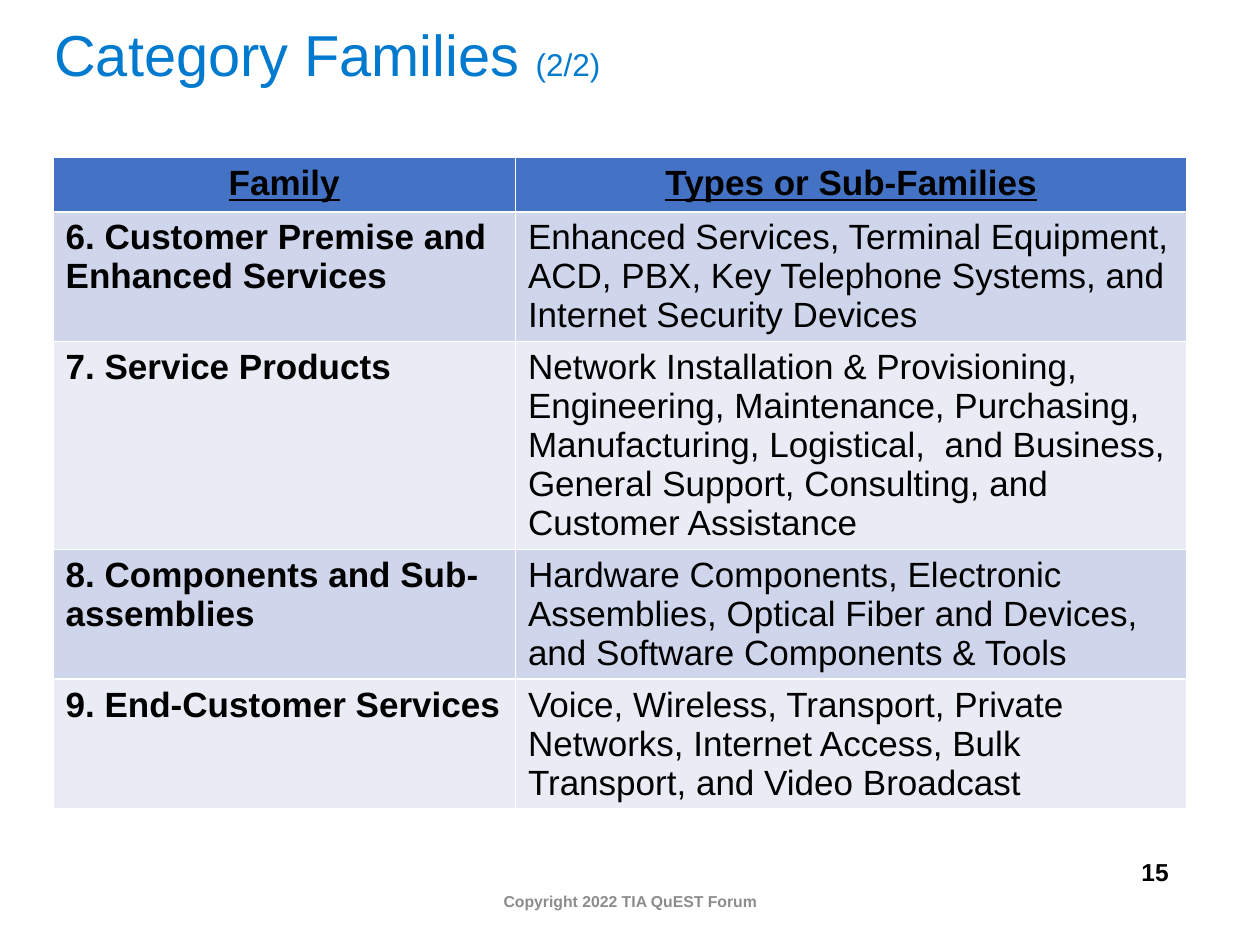
from typing import NamedTuple

from pptx import Presentation
from pptx import util as u
from pptx.dml.color import RGBColor
from pptx.enum import text


class Family(NamedTuple):
    name: str
    types: str


class Label(NamedTuple):
    words: str
    box: tuple[float, float, float, float]  # left, top, width, height in cm
    size: float
    color: str
    anchor: text.MSO_ANCHOR


FAMILIES = [
    Family("6. Customer Premise and Enhanced Services",
           "Enhanced Services, Terminal Equipment, ACD, PBX, Key Telephone "
           "Systems, and Internet Security Devices"),
    Family("7. Service Products",
           "Network Installation & Provisioning, Engineering, Maintenance, "
           "Purchasing, Manufacturing, Logistical,  and Business, "
           "General Support, Consulting, and Customer Assistance"),
    Family("8. Components and Sub-assemblies",
           "Hardware Components, Electronic Assemblies, Optical Fiber and "
           "Devices, and Software Components & Tools"),
    Family("9. End-Customer Services",
           "Voice, Wireless, Transport, Private Networks, Internet Access, "
           "Bulk Transport, and Video Broadcast"),
]
LABELS = [
    Label("Copyright 2022 TIA QuEST Forum", (8.41, 17.65, 8.59, 1.02),
          9, "8C8C8C", text.MSO_ANCHOR.MIDDLE),
    Label("15", (21.17, 17.15, 4.23, 0.86),
          14, "000000", text.MSO_ANCHOR.TOP),
]
HEADER_FILL = "4472C4"
BAND_FILLS = ("CFD5EA", "E9EBF5")


def rgb(value: str) -> RGBColor:
    return RGBColor.from_string(value)


def add_text(p, words: str, *, size: float = 20, color: str = "000000",
             bold: bool = False, underline: bool = False,
             align=text.PP_ALIGN.LEFT) -> None:
    p.alignment = align
    r = p.add_run()
    r.text = words
    f = r.font
    f.name, f.size, f.bold, f.underline = "Arial", u.Pt(size), bold, underline
    f.color.rgb = rgb(color)


def fill_cell(cell, words: str, fill: str, **style) -> None:
    cell.fill.solid()
    cell.fill.fore_color.rgb = rgb(fill)
    add_text(cell.text_frame.paragraphs[0], words, **style)


def add_title(s) -> None:
    sp = s.shapes.title
    sp.left, sp.top, sp.width, sp.height = map(u.Cm, (0.84, 0, 23.29, 2.34))
    tf = sp.text_frame
    tf.vertical_anchor = text.MSO_ANCHOR.MIDDLE
    p = tf.paragraphs[0]
    p.line_spacing = 0.9
    add_text(p, "Category Families ", size=33, color="007ACF")
    add_text(p, "(2/2)", size=18, color="007ACF")


def add_families(s, families: list[Family]) -> None:
    header_height, row_height = 1.09, 1.32
    table = s.shapes.add_table(
        len(families) + 1, 2, u.Cm(1.07), u.Cm(3.18), u.Cm(22.86),
        u.Cm(header_height + row_height * len(families))).table
    for column, width in zip(table.columns, (9.32, 13.54)):
        column.width = u.Cm(width)
    for i, row in enumerate(table.rows):
        row.height = u.Cm(row_height if i else header_height)

    for col, words in enumerate(("Family", "Types or Sub-Families")):
        fill_cell(table.cell(0, col), words, HEADER_FILL, bold=True,
                  underline=True, align=text.PP_ALIGN.CENTER)
    for i, family in enumerate(families):
        for col, words in enumerate(family):
            fill_cell(table.cell(i + 1, col), words, BAND_FILLS[i % 2],
                      bold=col == 0)


def add_label(s, label: Label) -> None:
    tf = s.shapes.add_textbox(*map(u.Cm, label.box)).text_frame
    tf.word_wrap = True
    tf.vertical_anchor = label.anchor
    add_text(tf.paragraphs[0], label.words, size=label.size,
             color=label.color, bold=True, align=text.PP_ALIGN.CENTER)


def main() -> None:
    prs = Presentation()
    prs.slide_width, prs.slide_height = u.Cm(25.4), u.Cm(19.05)
    s = prs.slides.add_slide(prs.slide_layouts[5])

    # Heading and table
    add_title(s)
    add_families(s, FAMILIES)

    # Footer and page number
    for label in LABELS:
        add_label(s, label)

    prs.save("out.pptx")


if __name__ == "__main__":
    main()
